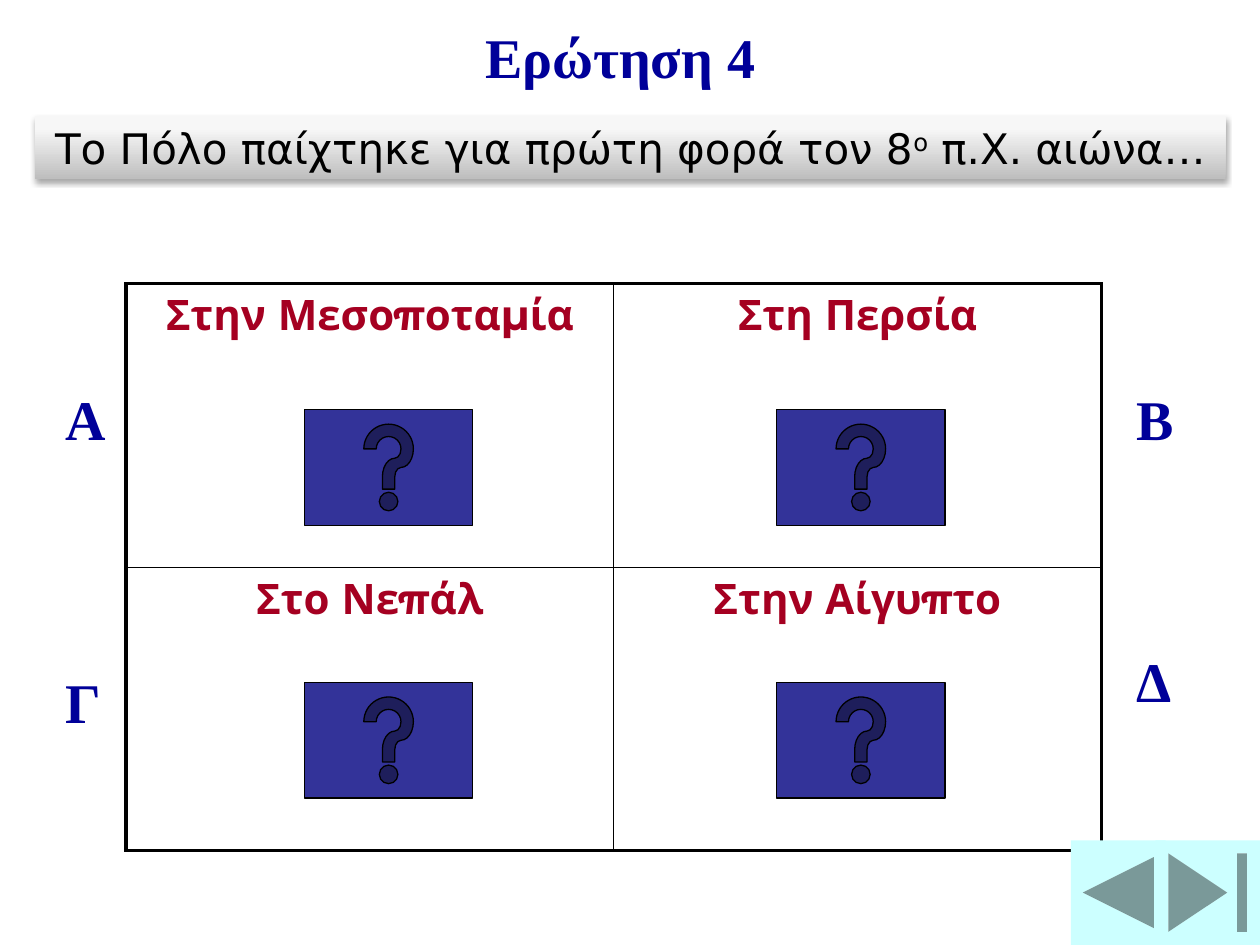
from copy import deepcopy

from lxml import etree
from pptx import Presentation
from pptx.dml.color import RGBColor
from pptx.enum.shapes import MSO_SHAPE
from pptx.enum.text import MSO_ANCHOR, MSO_AUTO_SIZE, PP_ALIGN
from pptx.oxml.ns import qn
from pptx.util import Cm, Pt

CENTER = PP_ALIGN.CENTER
MIDDLE = MSO_ANCHOR.MIDDLE
GROW = MSO_AUTO_SIZE.SHAPE_TO_FIT_TEXT
RECTANGLE = MSO_SHAPE.RECTANGLE
HELP = MSO_SHAPE.ACTION_BUTTON_HELP
END = MSO_SHAPE.ACTION_BUTTON_END
PREVIOUS = MSO_SHAPE.ACTION_BUTTON_BACK_OR_PREVIOUS

BLACK = RGBColor(0x00, 0x00, 0x00)
WHITE = RGBColor(0xFF, 0xFF, 0xFF)
NAVY = RGBColor(0x00, 0x00, 0x99)
INDIGO = RGBColor(0x33, 0x33, 0x99)
CRIMSON = RGBColor(0xA5, 0x00, 0x21)
PALE_CYAN = RGBColor(0xCC, 0xFF, 0xFF)
BANNER_STOPS = [
    (0, RGBColor(0xBE, 0xBE, 0xBE)),
    (0.8, RGBColor(0xF7, 0xF7, 0xF7)),
    (1, RGBColor(0xF8, 0xF8, 0xF8)),
]

ANSWERS = [["Στην Μεσοποταμία", "Στη Περσία"], ["Στο Νεπάλ", "Στην Αίγυπτο"]]
LETTERS = [("Α", 1.07, 7.62), ("Γ", 1.07, 13.34), ("Β", 22.66, 7.62), ("Δ", 22.66, 12.9)]
QUESTION = [("Το Πόλο παίχτηκε για πρώτη φορά τον 8", 0), ("ο", 30000), (" π.Χ. αιώνα…", 0)]


def set_font(para, name, size, color, bold=False):
    """Set the font of a whole paragraph."""
    font = para.font
    font.name, font.size, font.bold = name, Pt(size), bold
    font.color.rgb = color


def add_heading(page, text, left, top, width):
    """Add a bold navy text box."""
    frame = page.shapes.add_textbox(Cm(left), Cm(top), Cm(width), Cm(1.6)).text_frame
    frame.word_wrap = True
    frame.auto_size = GROW
    para = frame.paragraphs[0]
    para.text = text
    set_font(para, "Times New Roman", 32, NAVY, True)


def add_border(cell, side, points):
    """Add a black border to one side of a cell."""
    properties = cell._tc.get_or_add_tcPr()
    line = etree.SubElement(properties, qn(f"a:ln{side}"), w=str(Pt(points)))
    fill = etree.SubElement(line, qn("a:solidFill"))
    etree.SubElement(fill, qn("a:srgbClr"), val=str(BLACK))


def add_answers(page):
    """Add the answer table with a thick outer frame."""
    table = page.shapes.add_table(2, 2, Cm(2.54), Cm(5.72), Cm(19.66), Cm(11.43)).table
    table.first_row = table.horz_banding = False
    for row, answers in enumerate(ANSWERS):
        for column, answer in enumerate(answers):
            cell = table.cell(row, column)
            outer_sides = ("LR"[column], "TB"[row])
            for side in "LRTB":
                add_border(cell, side, 2.25 if side in outer_sides else 1)
            cell.fill.solid()
            cell.fill.fore_color.rgb = WHITE
            para = cell.text_frame.paragraphs[0]
            para.text = answer
            para.alignment = CENTER
            set_font(para, "Montserrat", 24, CRIMSON, True)


def add_button(page, kind, left, top, width, height, color, outlined=False):
    """Add an action button."""
    button = page.shapes.add_shape(kind, Cm(left), Cm(top), Cm(width), Cm(height))
    button.shadow.inherit = False
    button.fill.solid()
    button.fill.fore_color.rgb = color
    if outlined:
        button.line.color.rgb = BLACK
        button.line.width = Pt(0.75)
    else:
        button.line.fill.background()


def add_shadow(shape):
    """Give a shape a soft shadow below it."""
    shape.shadow.inherit = False
    effects = shape._element.spPr.find(qn("a:effectLst"))
    shadow = etree.SubElement(
        effects, qn("a:outerShdw"), blurRad=str(Pt(3.1)), dist=str(Pt(1.8)),
        dir="5400000", rotWithShape="0",
    )
    color = etree.SubElement(shadow, qn("a:srgbClr"), val=str(BLACK))
    etree.SubElement(color, qn("a:alpha"), val="35000")


def add_question(page):
    """Add the question on a grey gradient banner."""
    banner = page.shapes.add_shape(RECTANGLE, Cm(0.71), Cm(2.33), Cm(24), Cm(1.28))
    banner.line.fill.background()
    banner.fill.gradient()
    banner.fill.gradient_angle = 90
    stop_list = banner._element.spPr.find(".//" + qn("a:gsLst"))
    stop_list.append(deepcopy(stop_list[-1]))
    for stop, (position, color) in zip(banner.fill.gradient_stops, BANNER_STOPS):
        stop.position = position
        stop.color.rgb = color
    add_shadow(banner)
    frame = banner.text_frame
    frame.word_wrap = True
    frame.auto_size = GROW
    frame.vertical_anchor = MIDDLE
    para = frame.paragraphs[0]
    para.alignment = CENTER
    set_font(para, "DejaVu Sans", 24, BLACK)
    for text, baseline in QUESTION:
        span = para.add_run()
        span.text = text
        span.font.color.rgb = BLACK
        if baseline:
            span._r.get_or_add_rPr().set("baseline", str(baseline))


def main():
    """Build the quiz slide and save it."""
    deck = Presentation()
    deck.slide_width, deck.slide_height = Cm(25.4), Cm(19.05)
    page = deck.slides.add_slide(deck.slide_layouts[6])
    add_answers(page)
    for letter, left, top in LETTERS:
        add_heading(page, letter, left, top, 1.27)
    add_heading(page, "Ερώτηση 4", 9.53, 0.33, 6.78)
    for top in (8.26, 13.76):
        for left in (6.14, 15.66):
            add_button(page, HELP, left, top, 3.39, 2.33, INDIGO, True)
    add_button(page, END, 23.29, 16.94, 2.11, 2.11, PALE_CYAN)
    add_button(page, PREVIOUS, 21.59, 16.94, 1.91, 2.11, PALE_CYAN)
    add_question(page)
    deck.save("out.pptx")


if __name__ == "__main__":
    main()
